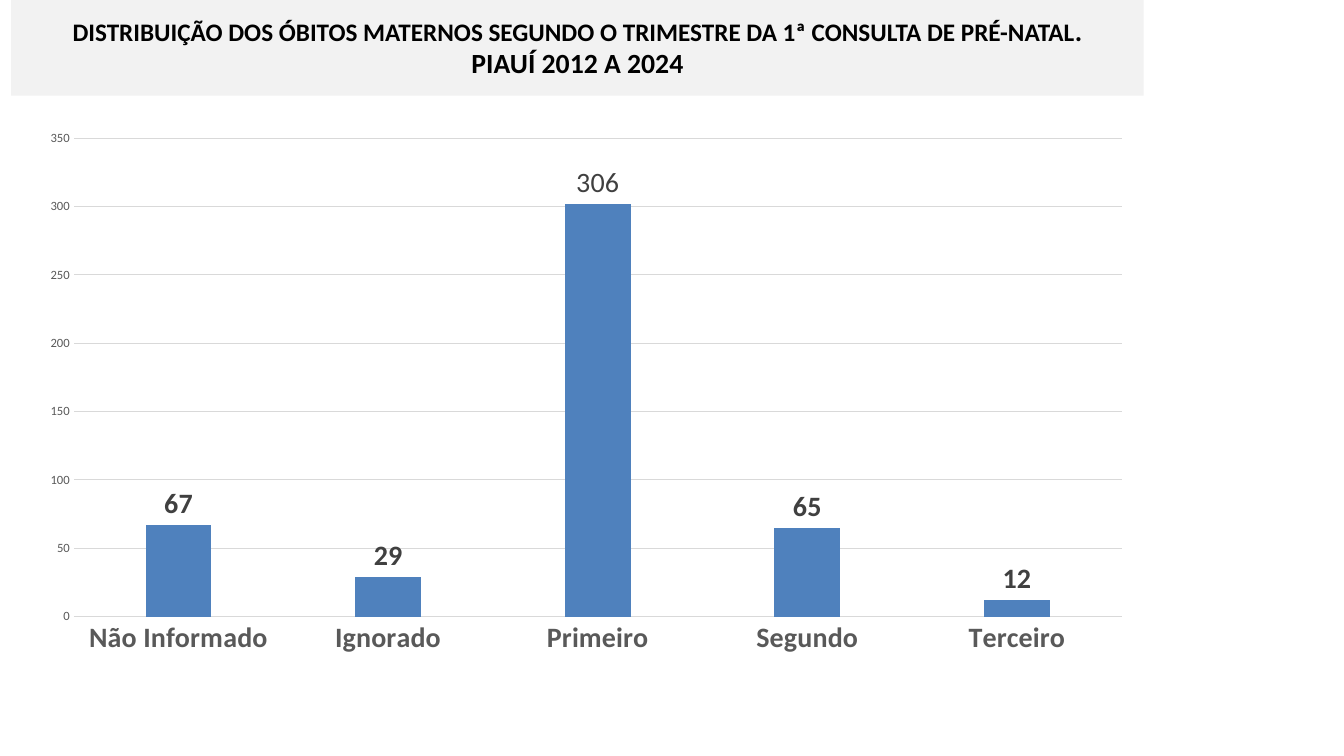
import pptx
import pptx.chart.data
import pptx.dml.color
import pptx.enum.chart
import pptx.enum.shapes
import pptx.enum.text
import pptx.util

Pt = pptx.util.Pt


def color(hex_string):
    return pptx.dml.color.RGBColor.from_string(hex_string)


def style_font(font, size, hex_string, bold=False):
    for name, value in {"name": "Calibri", "size": Pt(size), "bold": bold}.items():
        setattr(font, name, value)
    font.color.rgb = color(hex_string)


deck = pptx.Presentation()
deck.slide_width, deck.slide_height = Pt(960), Pt(540)
page = deck.slides.add_slide(deck.slide_layouts[6])

# Title band
band = page.shapes.add_shape(
    pptx.enum.shapes.MSO_SHAPE.RECTANGLE, Pt(8), Pt(0), Pt(809), Pt(68.4))
band.shadow.inherit = False
band.fill.solid()
band.fill.fore_color.rgb = color("F2F2F2")
band.line.fill.background()
frame = band.text_frame
frame.word_wrap = True
frame.vertical_anchor = pptx.enum.text.MSO_ANCHOR.MIDDLE

title_lines = [
    [("DISTRIBUIÇÃO DOS ÓBITOS MATERNOS SEGUNDO O TRIMESTRE DA 1ª CONSULTA DE PRÉ-NATAL", 18),
     (".", 19.8)],
    [("PIAUÍ 2012 A 2024", 19.8)],
]
for index, line in enumerate(title_lines):
    para = frame.add_paragraph() if index else frame.paragraphs[0]
    para.alignment = pptx.enum.text.PP_ALIGN.CENTER
    para.line_spacing = 0.95
    for text, size in line:
        span = para.add_run()
        span.text = text
        style_font(span.font, size, "000000", bold=True)

# Deaths by trimester of the first consultation
deaths = {"Não Informado": 67, "Ignorado": 29, "Primeiro": 302, "Segundo": 65, "Terceiro": 12}
data = pptx.chart.data.CategoryChartData()
data.categories = list(deaths)
data.add_series("Series 1", list(deaths.values()))
chart = page.shapes.add_chart(
    pptx.enum.chart.XL_CHART_TYPE.COLUMN_CLUSTERED,
    Pt(20.2), Pt(85.7), Pt(797), Pt(390.2), data).chart
chart.has_legend = False
chart.has_title = False
style_font(chart.font, 10, "000000")

plot = chart.plots[0]
for name, value in {"gap_width": 219, "overlap": -27, "vary_by_categories": False}.items():
    setattr(plot, name, value)
bars = plot.series[0]
bars.format.fill.solid()
bars.format.fill.fore_color.rgb = color("4F81BD")

label_position = pptx.enum.chart.XL_LABEL_POSITION.OUTSIDE_END
labels = bars.data_labels
labels.show_value = True
labels.position = label_position
style_font(labels.font, 20, "404040", bold=True)

first_label = bars.points[list(deaths).index("Primeiro")].data_label
first_label.position = label_position
span = first_label.text_frame.paragraphs[0].add_run()
span.text = "306"
style_font(span.font, 20, "404040")

# Axes
values, trimesters = chart.value_axis, chart.category_axis
for axis, size, bold in [(values, 9, False), (trimesters, 20, True)]:
    axis.major_tick_mark = axis.minor_tick_mark = pptx.enum.chart.XL_TICK_MARK.NONE
    style_font(axis.tick_labels.font, size, "595959", bold)
values.minimum_scale, values.maximum_scale, values.major_unit = 0, 350, 50
values.has_major_gridlines = True
values.format.line.fill.background()
for line in (values.major_gridlines.format.line, trimesters.format.line):
    line.width = Pt(0.75)
    line.color.rgb = color("D9D9D9")

deck.save("out.pptx")
